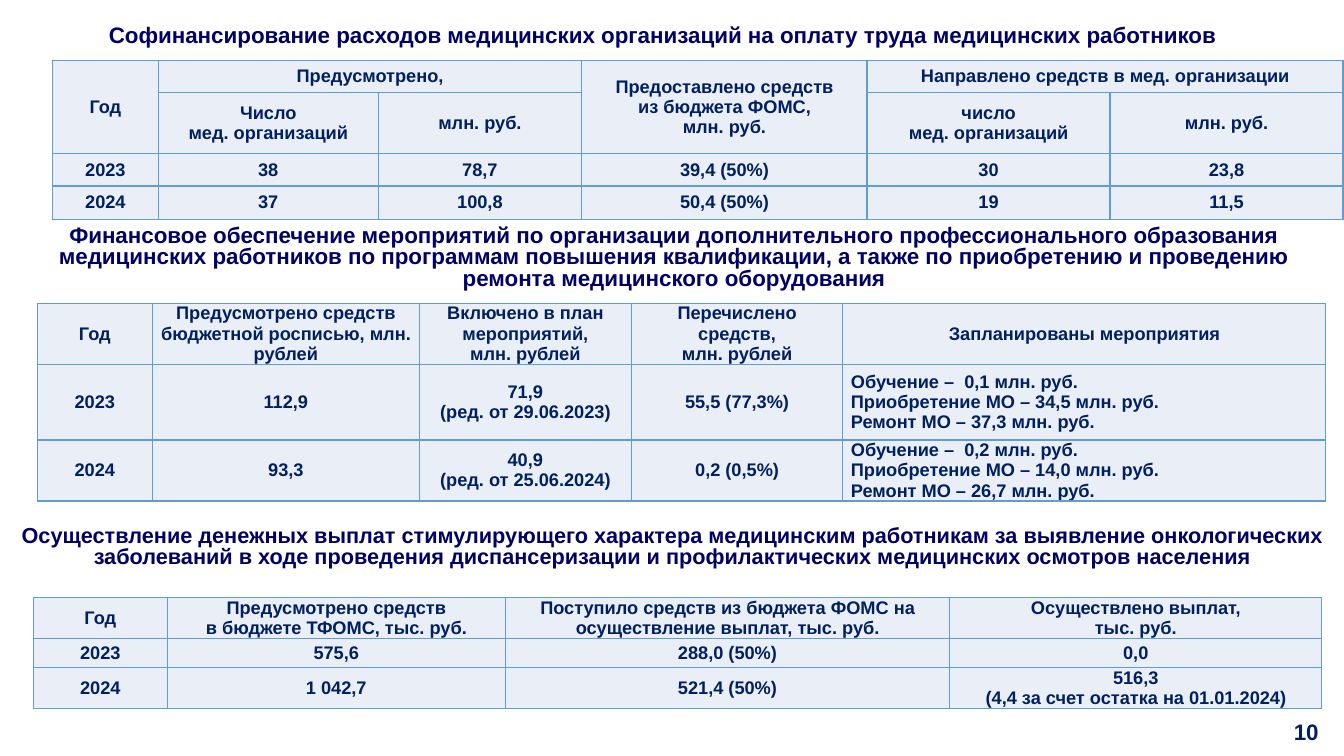
from dataclasses import dataclass

from lxml import etree
from pptx import Presentation
from pptx.dml.color import RGBColor
from pptx.enum.text import MSO_ANCHOR, MSO_AUTO_SIZE, PP_ALIGN
from pptx.oxml.ns import qn
from pptx.util import Inches, Pt

CENTER, LEFT = PP_ALIGN.CENTER, PP_ALIGN.LEFT
MIDDLE, TOP = MSO_ANCHOR.MIDDLE, MSO_ANCHOR.TOP
NO_AUTOFIT = MSO_AUTO_SIZE.NONE
TITLE_ONLY = 5
FONT = "Arial"
COLORS = {"heading": "000066", "text": "002060", "cell": "EAEFF7", "border": "629DD1"}


@dataclass
class Heading:
    left: float
    top: float
    width: float
    height: float
    size: float
    text: str


@dataclass
class Grid:
    left: float
    top: float
    columns: list[float]
    rows: list[float]
    # Each cell is a list of paragraphs; a newline is a line break
    cells: list[list[list[str]]]
    merges: tuple = ()
    left_column: int = -1


HEADINGS = [
    Heading(0, 0.21, 13.15, 0.31, 16,
            "Софинансирование расходов медицинских организаций на оплату труда "
            "медицинских работников"),
    Heading(0.29, 2.18, 12.79, 0.77, 16,
            "Финансовое обеспечение мероприятий по организации дополнительного "
            "профессионального образования медицинских работников по программам "
            "повышения квалификации, а также по приобретению и проведению ремонта "
            "медицинского оборудования"),
    Heading(0, 5.17, 13.33, 0.53, 15.5,
            "Осуществление денежных выплат стимулирующего характера медицинским "
            "работникам за выявление онкологических заболеваний в ходе проведения "
            "диспансеризации и профилактических медицинских осмотров населения"),
]

GRIDS = [
    # Co-financing of salaries
    Grid(0.52, 0.6, [1.05, 2.18, 2.02, 2.83, 2.41, 2.31], [0.32, 0.47, 0.32, 0.33], [
        [["Год"], ["Предусмотрено,"], [],
         ["Предоставлено средств\nиз бюджета ФОМС,\nмлн. руб."],
         ["Направлено средств в мед. организации"], []],
        [[], ["Число\nмед. организаций"], ["млн. руб."], [],
         ["число\nмед. организаций"], ["млн. руб."]],
        [["2023"], ["38"], ["78,7"], ["39,4 (50%)"], ["30"], ["23,8"]],
        [["2024"], ["37"], ["100,8"], ["50,4 (50%)"], ["19"], ["11,5"]],
    ], merges=((0, 0, 1, 0), (0, 1, 0, 2), (0, 3, 1, 3), (0, 4, 0, 5))),
    # Training and equipment
    Grid(0.37, 3.01, [1.14, 2.65, 2.1, 2.1, 4.79], [0.55, 0.75, 0.53], [
        [["Год"], ["Предусмотрено средств бюджетной росписью, млн. рублей"],
         ["Включено в план мероприятий,\nмлн. рублей"],
         ["Перечислено средств,\nмлн. рублей"], ["Запланированы мероприятия"]],
        [["2023"], ["112,9"], ["71,9", "(ред. от 29.06.2023)"], ["55,5 (77,3%)"],
         ["Обучение –  0,1 млн. руб.", "Приобретение МО – 34,5 млн. руб.",
          "Ремонт МО – 37,3 млн. руб."]],
        [["2024"], ["93,3"], ["40,9", "(ред. от 25.06.2024)"], ["0,2 (0,5%)"],
         ["Обучение –  0,2 млн. руб.", "Приобретение МО – 14,0 млн. руб.",
          "Ремонт МО – 26,7 млн. руб."]],
    ], left_column=4),
    # Incentive payments
    Grid(0.33, 5.93, [1.33, 3.35, 4.41, 3.69], [0.32, 0.29, 0.33], [
        [["Год"], ["Предусмотрено средств\nв бюджете ТФОМС, тыс. руб."],
         ["Поступило средств из бюджета ФОМС на осуществление выплат, тыс. руб."],
         ["Осуществлено выплат,\nтыс. руб."]],
        [["2023"], ["575,6"], ["288,0 (50%)"], ["0,0"]],
        [["2024"], ["1 042,7"], ["521,4 (50%)"],
         ["516,3", "(4,4 за счет остатка на 01.01.2024)"]],
    ]),
]


def write(frame, paragraphs: list[str], size: float, color: str, align=CENTER) -> None:
    for index, text in enumerate(paragraphs):
        para = frame.paragraphs[0] if index == 0 else frame.add_paragraph()
        para.alignment = align
        for number, line in enumerate(text.split("\n")):
            if number:
                para.add_line_break()
            span = para.add_run()
            span.text = line
            span.font.name = FONT
            span.font.size = Pt(size)
            span.font.bold = True
            span.font.color.rgb = RGBColor.from_string(COLORS[color])


def place_heading(box, heading: Heading) -> None:
    box.left, box.top = Inches(heading.left), Inches(heading.top)
    box.width, box.height = Inches(heading.width), Inches(heading.height)
    frame = box.text_frame
    frame.word_wrap = True
    frame.auto_size = NO_AUTOFIT
    frame.vertical_anchor = MIDDLE
    write(frame, [heading.text], heading.size, "heading")
    frame.paragraphs[0].line_spacing = 0.8


def add_borders(cell) -> None:
    properties = cell._tc.get_or_add_tcPr()
    for position, side in enumerate(("a:lnL", "a:lnR", "a:lnT", "a:lnB")):
        line = etree.Element(qn(side), w=str(Pt(1)))
        fill = etree.SubElement(line, qn("a:solidFill"))
        etree.SubElement(fill, qn("a:srgbClr"), val=COLORS["border"])
        properties.insert(position, line)


def add_grid(page, grid: Grid) -> None:
    table = page.shapes.add_table(
        len(grid.rows), len(grid.columns), Inches(grid.left), Inches(grid.top),
        Inches(sum(grid.columns)), Inches(sum(grid.rows))).table
    table.first_row = table.horz_banding = False
    for column, width in zip(table.columns, grid.columns):
        column.width = Inches(width)
    for row, height in zip(table.rows, grid.rows):
        row.height = Inches(height)
    for r, values in enumerate(grid.cells):
        for c, paragraphs in enumerate(values):
            cell = table.cell(r, c)
            cell.margin_left = cell.margin_right = Inches(0.08)
            cell.margin_top = cell.margin_bottom = 0
            cell.vertical_anchor = MIDDLE
            cell.fill.solid()
            cell.fill.fore_color.rgb = RGBColor.from_string(COLORS["cell"])
            add_borders(cell)
            align = LEFT if r and c == grid.left_column else CENTER
            write(cell.text_frame, paragraphs, 13, "text", align)
    for top, left, bottom, right in grid.merges:
        table.cell(top, left).merge(table.cell(bottom, right))


def add_page_number(page, number: str) -> None:
    box = page.shapes.add_textbox(Inches(12.73), Inches(7.08), Inches(0.45), Inches(0.4))
    frame = box.text_frame
    frame.margin_left = frame.margin_right = 0
    frame.word_wrap = True
    frame.vertical_anchor = TOP
    write(frame, [number], 16, "text")


def main() -> None:
    deck = Presentation()
    deck.slide_width, deck.slide_height = Inches(13.33), Inches(7.5)
    page = deck.slides.add_slide(deck.slide_layouts[TITLE_ONLY])

    # Section headings: the first one is the slide title
    place_heading(page.shapes.title, HEADINGS[0])
    for heading in HEADINGS[1:]:
        place_heading(page.shapes.add_textbox(0, 0, 0, 0), heading)

    # Tables
    for grid in GRIDS:
        add_grid(page, grid)

    add_page_number(page, "10")
    deck.save("out.pptx")


if __name__ == "__main__":
    main()
